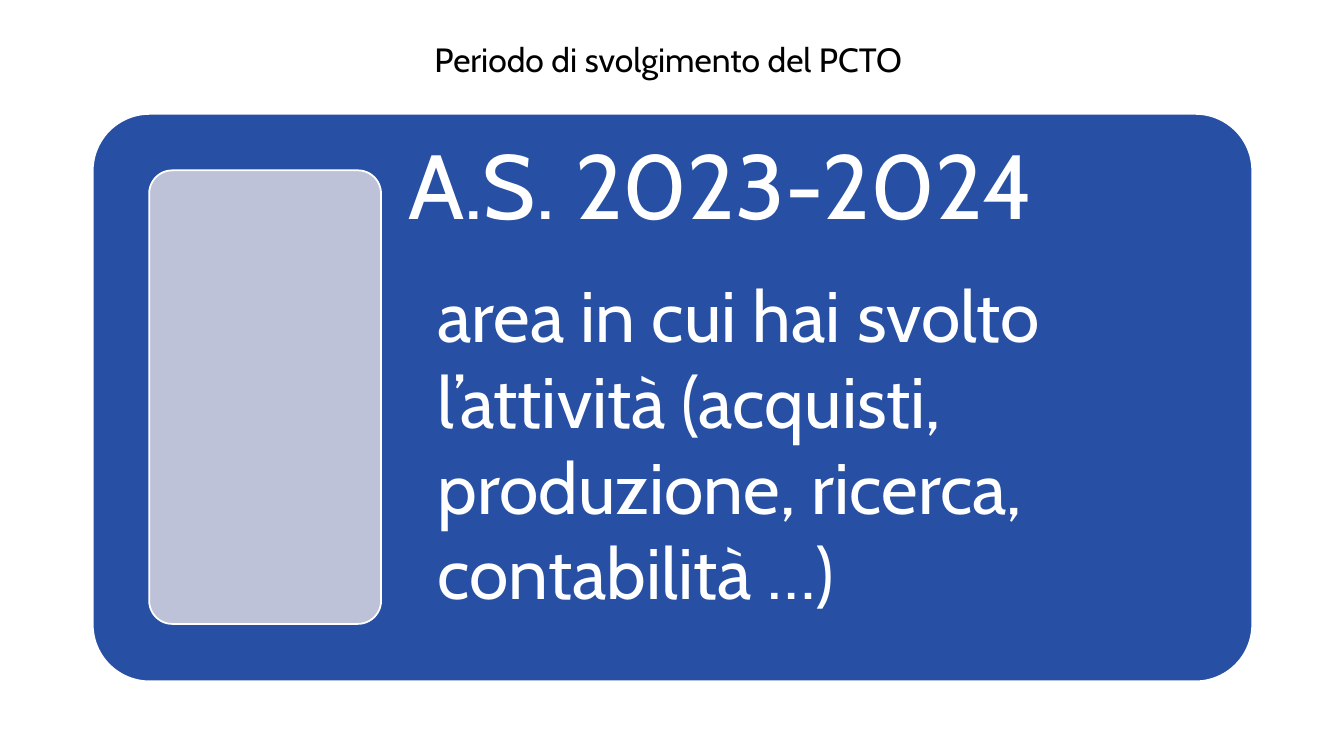
from dataclasses import dataclass

from pptx import Presentation
from pptx.dml.color import RGBColor
from pptx.enum.shapes import MSO_SHAPE as Kind
from pptx.enum.text import MSO_ANCHOR as Anchor, MSO_AUTO_SIZE as Fit, PP_ALIGN as Align
from pptx.slide import Slide
from pptx.text.text import TextFrame as Frame
from pptx.util import Inches, Pt

FONT = "Cabin"
WHITE = "FFFFFF"
MARGIN = 0.56
PAD = 0.27


@dataclass
class Box:
    left: float
    top: float
    width: float
    height: float

    def emu(self) -> list[int]:
        return [Inches(v) for v in (self.left, self.top, self.width, self.height)]


@dataclass
class Panel:
    box: Box
    fill: str


@dataclass
class Line:
    text: str
    size: float
    color: str = WHITE
    align: Align = Align.LEFT
    space: float = 1.0
    after: float = 0
    indent: float = 0


CARD = Box(0.92, 1.13, 11.5, 5.63)
SIDE = Box(CARD.left + MARGIN, CARD.top + MARGIN, 2.3, 4.5)
EDGE = SIDE.left + SIDE.width
BODY = Box(EDGE, CARD.top, CARD.left + CARD.width - EDGE, CARD.height)
HEAD = Box(3.49, 0.34, 6.35, 0.5)

PANELS = [Panel(CARD, "274FA4"), Panel(SIDE, "BEC2D8")]
TITLE = Line("Periodo di svolgimento del PCTO ", 24, "000000", Align.CENTER)
LINES = [
    Line("A.S. 2023-2024", 65, space=0.9, after=22.75),
    Line(
        "area in cui hai svolto l’attività (acquisti, produzione, ricerca, contabilità …)",
        51,
        indent=0.29,
    ),
]


def rgb(code: str) -> RGBColor:
    return RGBColor.from_string(code)


def draw(slide: Slide, panel: Panel) -> None:
    shape = slide.shapes.add_shape(Kind.ROUNDED_RECTANGLE, *panel.box.emu())
    shape.adjustments[0] = 0.1
    shape.shadow.inherit = False
    shape.fill.solid()
    shape.fill.fore_color.rgb = rgb(panel.fill)
    shape.line.color.rgb = rgb(WHITE)
    shape.line.width = Pt(1.25)


def write(frame: Frame, lines: list[Line], pad: tuple[float, float], fit: Fit) -> None:
    across, down = (Inches(v) for v in pad)
    look = {
        "word_wrap": True,
        "auto_size": fit,
        "vertical_anchor": Anchor.TOP,
        "margin_left": across,
        "margin_right": across,
        "margin_top": down,
        "margin_bottom": down,
    }
    for name, value in look.items():
        setattr(frame, name, value)
    for i, line in enumerate(lines):
        para = frame.add_paragraph() if i else frame.paragraphs[0]
        form = {
            "alignment": line.align,
            "line_spacing": line.space,
            "space_before": Pt(0),
            "space_after": Pt(line.after),
        }
        for name, value in form.items():
            setattr(para, name, value)
        props = para._p.get_or_add_pPr()
        props.set("marL", str(Inches(line.indent)))
        props.set("indent", "0")
        run = para.add_run()
        run.text = line.text
        run.font.name = FONT
        run.font.size = Pt(line.size)
        run.font.color.rgb = rgb(line.color)


def main() -> None:
    deck = Presentation()
    deck.slide_width, deck.slide_height = Inches(13.33), Inches(7.5)
    slide = deck.slides.add_slide(deck.slide_layouts[5])
    for panel in PANELS:
        draw(slide, panel)
    body = slide.shapes.add_textbox(*BODY.emu())
    write(body.text_frame, LINES, (PAD, PAD), Fit.NONE)
    title = slide.shapes.title
    title.left, title.top, title.width, title.height = HEAD.emu()
    write(title.text_frame, [TITLE], (0.1, 0.05), Fit.SHAPE_TO_FIT_TEXT)
    deck.save("out.pptx")


if __name__ == "__main__":
    main()
